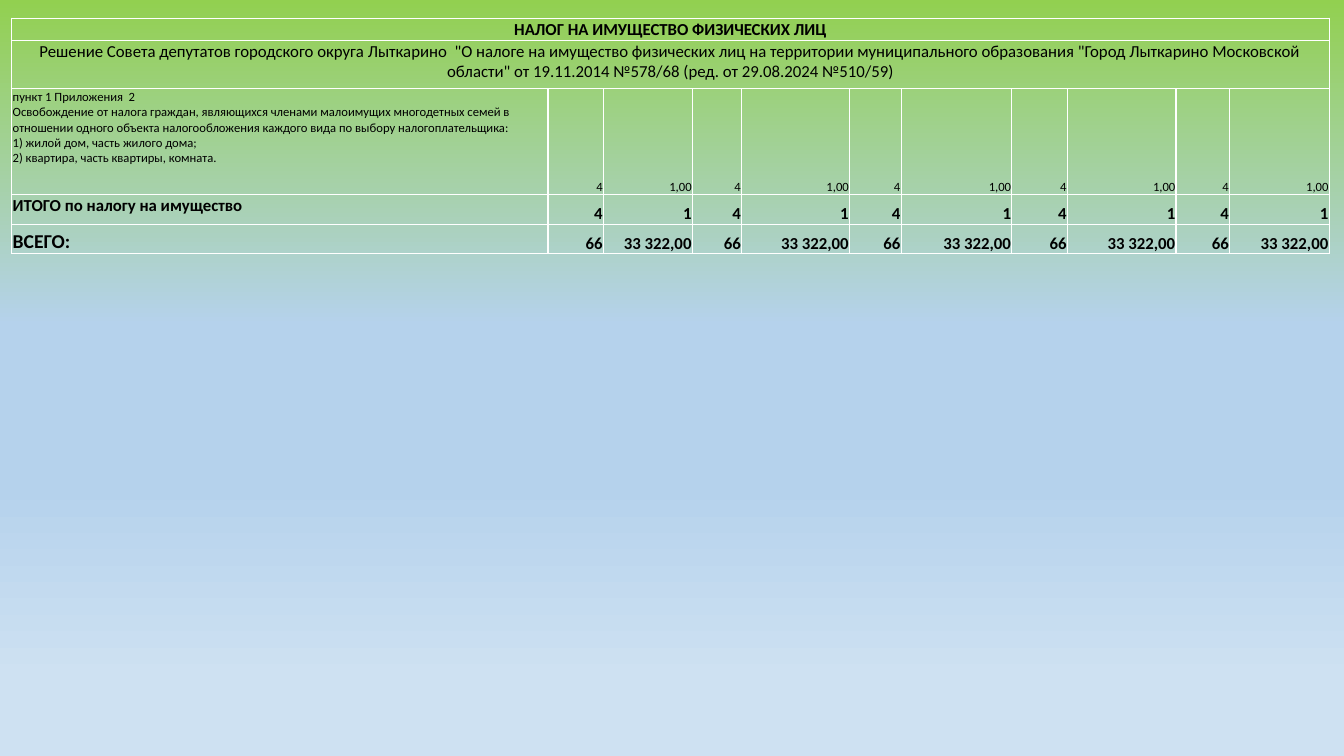
from lxml.etree import SubElement
from pptx import Presentation
from pptx.dml.color import RGBColor
from pptx.enum.text import MSO_ANCHOR, PP_ALIGN
from pptx.oxml.ns import qn
from pptx.util import Cm, Pt


def color(hex_value):
    return RGBColor.from_string(hex_value)


def write_cell(cell, lines, size, bold=False, align=PP_ALIGN.LEFT, anchor=MSO_ANCHOR.TOP):
    cell.vertical_anchor = anchor
    for index, line in enumerate(lines):
        frame = cell.text_frame
        para = frame.add_paragraph() if index else frame.paragraphs[0]
        para.alignment = align
        span = para.add_run()
        span.text = line
        span.font.color.rgb = color("000000")
        for name, value in {"name": "Calibri", "size": Pt(size), "bold": bold}.items():
            setattr(span.font, name, value)


deck = Presentation()
deck.slide_width, deck.slide_height = Cm(33.87), Cm(19.05)
page = deck.slides.add_slide(deck.slide_layouts[6])

# Background gradient, top to bottom
background = page.background.fill
background.gradient()
background.gradient_angle = 270
stops = next(page.element.iter(qn("a:gsLst")))
stops.clear()
for percent, shade in ((0, "92D050"), (43, "B5D2EC"), (64, "B5D2EC"), (90, "CEE1F2")):
    stop = SubElement(stops, qn("a:gs"), pos=str(percent * 1000))
    SubElement(stop, qn("a:srgbClr"), val=shade)

# Table grid
column_widths = (13.51, 1.4, 2.24, 1.24, 2.72, 1.3, 2.79, 1.4, 2.74, 1.35, 2.51)
row_heights = (0.56, 1.22, 2.67, 0.74, 0.74)
table = page.shapes.add_table(
    len(row_heights), len(column_widths), Cm(0.3), Cm(0.46),
    Cm(sum(column_widths)), Cm(sum(row_heights))).table
table.first_row = table.horz_banding = False
for column, width in zip(table.columns, column_widths):
    column.width = Cm(width)
for row, height in zip(table.rows, row_heights):
    row.height = Cm(height)

# White borders, tight margins and no fill in every cell
cell_format = {"margin_left": Cm(0.02), "margin_right": Cm(0.02),
               "margin_top": Cm(0.02), "margin_bottom": Cm(0)}
for cell in table.iter_cells():
    for name, value in cell_format.items():
        setattr(cell, name, value)
    properties = cell._tc.get_or_add_tcPr()
    for side in ("a:lnL", "a:lnR", "a:lnT", "a:lnB"):
        border = SubElement(properties, qn(side), w=str(Pt(1)))
        SubElement(SubElement(border, qn("a:solidFill")), qn("a:srgbClr"), val="FFFFFF")
    cell.fill.background()

# Headings across the full width
headings = (
    ("НАЛОГ НА ИМУЩЕСТВО ФИЗИЧЕСКИХ ЛИЦ", True),
    ('Решение Совета депутатов городского округа Лыткарино  "О налоге на имущество '
     'физических лиц на территории муниципального образования "Город Лыткарино '
     'Московской области" от 19.11.2014 №578/68 (ред. от 29.08.2024 №510/59)', False),
)
for index, (heading, bold) in enumerate(headings):
    table.cell(index, 0).merge(table.cell(index, len(column_widths) - 1))
    write_cell(table.cell(index, 0), [heading], 12, bold, PP_ALIGN.CENTER)

# Data rows: label, label size, label anchor, count, amount, number size, bold
exemption = (
    "пункт 1 Приложения  2",
    "Освобождение от налога граждан, являющихся членами малоимущих многодетных семей "
    "в отношении одного объекта налогообложения каждого вида по выбору налогоплательщика:",
    "1) жилой дом, часть жилого дома;",
    "2) квартира, часть квартиры, комната.",
)
data_rows = (
    (exemption, 9, MSO_ANCHOR.TOP, "4", "1,00", 9, False),
    (["ИТОГО по налогу на имущество"], 12, MSO_ANCHOR.TOP, "4", "1", 12, True),
    (["ВСЕГО:"], 14, MSO_ANCHOR.BOTTOM, "66", "33 322,00", 12, True),
)
for index, data in enumerate(data_rows, len(headings)):
    label, label_size, label_anchor, count, amount, size, bold = data
    write_cell(table.cell(index, 0), label, label_size, bold, anchor=label_anchor)
    for column in range(1, len(column_widths)):
        number = count if column % 2 else amount
        write_cell(table.cell(index, column), [number], size, bold,
                   PP_ALIGN.RIGHT, MSO_ANCHOR.BOTTOM)

deck.save("out.pptx")
